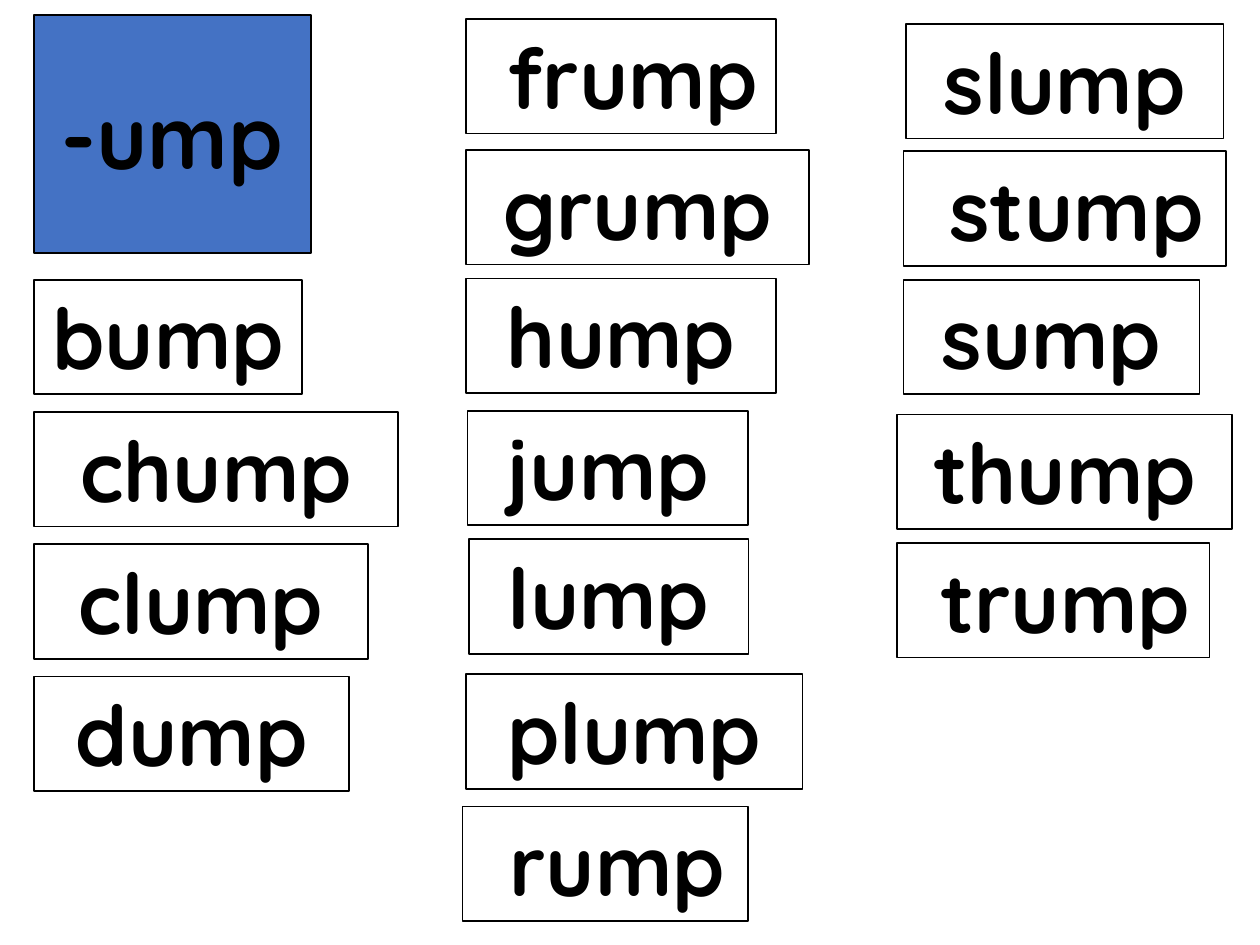
from dataclasses import dataclass

from pptx import Presentation
from pptx.dml.color import RGBColor
from pptx.enum.shapes import MSO_SHAPE as Shape
from pptx.enum.text import MSO_ANCHOR as Anchor, MSO_AUTO_SIZE as AutoSize, PP_ALIGN as Align
from pptx.slide import Slide
from pptx.util import Inches, Pt

BLACK = RGBColor(0x00, 0x00, 0x00)
WHITE = RGBColor(0xFF, 0xFF, 0xFF)
BLUE = RGBColor(0x44, 0x72, 0xC4)
CARD_HEIGHT = 0.91

WORD_FRAME = {"word_wrap": False, "auto_size": AutoSize.SHAPE_TO_FIT_TEXT, "vertical_anchor": Anchor.TOP}
FAMILY_FRAME = {"word_wrap": True, "auto_size": AutoSize.NONE, "vertical_anchor": Anchor.MIDDLE}


@dataclass(frozen=True)
class Card:
    text: str
    left: float
    top: float
    width: float
    height: float = CARD_HEIGHT
    fill: RGBColor = WHITE
    size: int = 48


WORD_CARDS = [
    Card(" frump ", 3.7, 0.15, 2.46),
    Card(" grump ", 3.7, 1.19, 2.72),
    Card(" hump ", 3.7, 2.21, 2.46),
    Card(" jump ", 3.71, 3.26, 2.23),
    Card(" lump ", 3.72, 4.28, 2.22),
    Card(" plump ", 3.7, 5.35, 2.67),
    Card(" rump ", 3.67, 6.4, 2.27),
    Card(" slump ", 7.19, 0.19, 2.52),
    Card(" stump ", 7.17, 1.2, 2.56),
    Card(" sump ", 7.17, 2.22, 2.35),
    Card(" thump ", 7.12, 3.29, 2.66),
    Card(" trump ", 7.12, 4.31, 2.48),
    Card("bump", 0.27, 2.22, 2.13),
    Card(" chump ", 0.27, 3.27, 2.89),
    Card(" clump ", 0.27, 4.32, 2.65),
    Card(" dump ", 0.27, 5.37, 2.5),
]
FAMILY_CARD = Card("-ump", 0.27, 0.12, 2.2, 1.89, BLUE, 50)


def apply_format(target: object, values: dict) -> None:
    for name, value in values.items():
        setattr(target, name, value)


def draw_card(slide: Slide, card: Card, frame_format: dict) -> None:
    bounds = [Inches(value) for value in (card.left, card.top, card.width, card.height)]
    shape = slide.shapes.add_shape(Shape.RECTANGLE, *bounds)
    shape.shadow.inherit = False
    shape.fill.solid()
    shape.fill.fore_color.rgb = card.fill
    shape.line.color.rgb = BLACK
    shape.line.width = Pt(1)
    apply_format(shape.text_frame, frame_format)
    paragraph = shape.text_frame.paragraphs[0]
    paragraph.alignment = Align.CENTER
    run = paragraph.add_run()
    run.text = card.text
    apply_format(run.font, {"name": "Quicksand", "size": Pt(card.size), "bold": True})
    run.font.color.rgb = BLACK


def main() -> None:
    presentation = Presentation()
    apply_format(presentation, {"slide_width": Inches(10), "slide_height": Inches(7.5)})
    slide = presentation.slides.add_slide(presentation.slide_layouts.get_by_name("Blank"))
    for card in WORD_CARDS:
        draw_card(slide, card, WORD_FRAME)
    draw_card(slide, FAMILY_CARD, FAMILY_FRAME)
    presentation.save("out.pptx")


if __name__ == "__main__":
    main()
